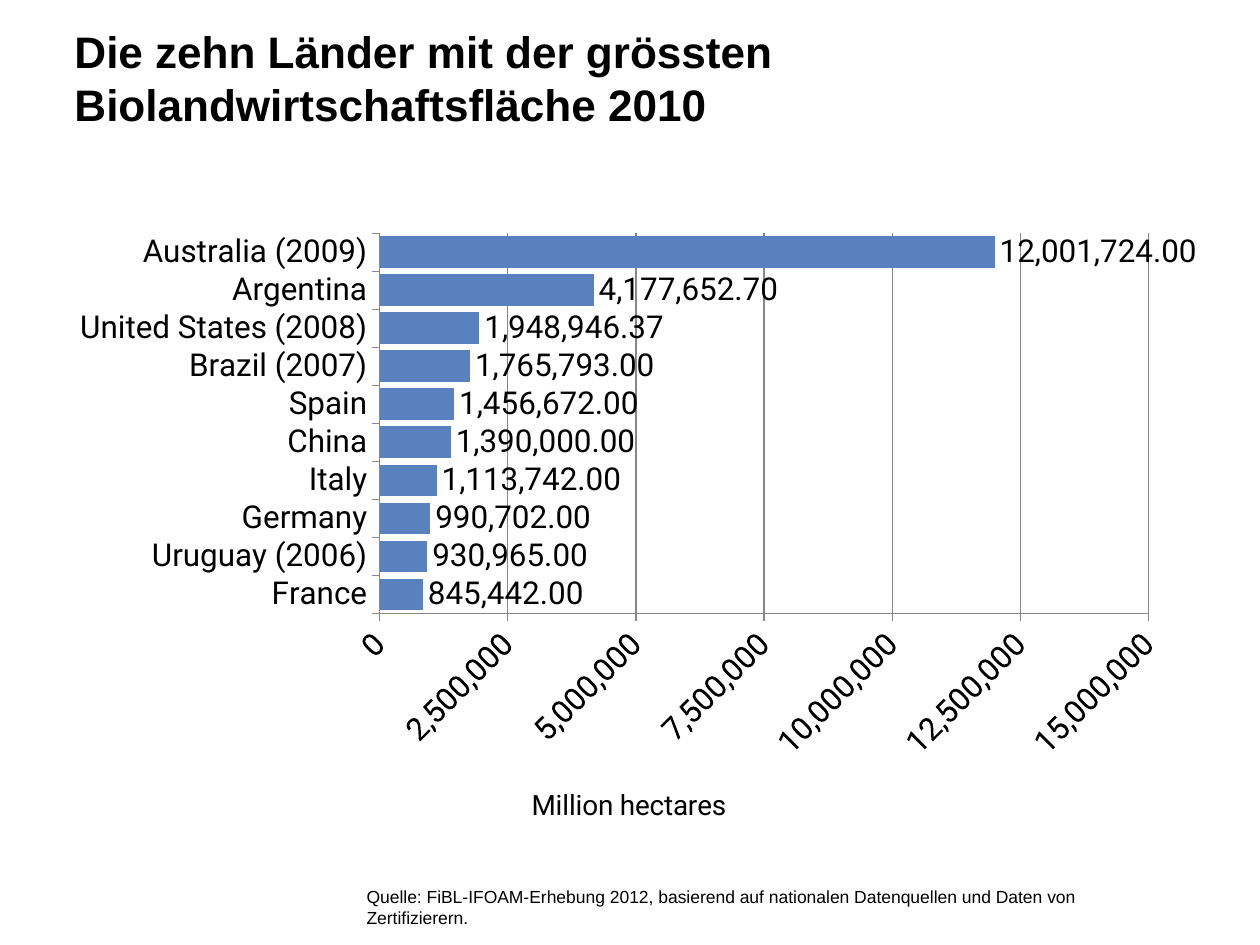
"""Build a slide charting the ten countries with the most organic farmland."""
import lxml.etree
import pptx
import pptx.chart.data
import pptx.dml.color
import pptx.enum.chart
import pptx.enum.text
import pptx.oxml
import pptx.oxml.ns
import pptx.util
from pptx.util import Cm

HECTARES = {
    "France": 845442,
    "Uruguay (2006)": 930965,
    "Germany": 990702,
    "Italy": 1113742,
    "China": 1390000,
    "Spain": 1456672,
    "Brazil (2007)": 1765793,
    "United States (2008)": 1948946.37,
    "Argentina": 4177652.7,
    "Australia (2009)": 12001724,
}


def rgb(code):
    return pptx.dml.color.RGBColor.from_string(code)


def apply(target, values):
    for name, value in values.items():
        setattr(target, name, value)


def place(element, index, **fractions):
    """Give a chart part a manual layout in fractions of the chart."""
    tag = pptx.oxml.ns.qn
    for old in element.findall(tag("c:layout")):
        element.remove(old)
    layout = pptx.oxml.parse_xml(f"<c:layout {pptx.oxml.ns.nsdecls('c')}/>")
    manual = lxml.etree.SubElement(layout, tag("c:manualLayout"))
    settings = {"xMode": "edge", "yMode": "edge", **fractions}
    if "w" in fractions:
        settings = {"layoutTarget": "inner", **settings}
    for name, value in settings.items():
        lxml.etree.SubElement(manual, tag(f"c:{name}")).set("val", str(value))
    element.insert(index, layout)


class SlideBuilder:
    """Hold the style and the current slide."""

    text_font, chart_font = "Arial", "Roboto"
    ink, bar, rule = "000000", "5981BD", "878787"

    def __init__(self, deck):
        self.slide = deck.slides.add_slide(deck.slide_layouts[5])

    def style(self, font, size, name, bold=False):
        apply(font, {"size": pptx.util.Pt(size), "name": name, "bold": bold})
        font.color.rgb = rgb(self.ink)

    def title(self, wording, box):
        heading = self.slide.shapes.title
        apply(heading, box)
        frame = heading.text_frame
        frame.text = wording
        apply(frame, {
            "margin_left": 0, "margin_top": 0,
            "margin_right": Cm(0.25), "margin_bottom": Cm(0.13),
            "vertical_anchor": pptx.enum.text.MSO_ANCHOR.MIDDLE,
            "auto_size": pptx.enum.text.MSO_AUTO_SIZE.NONE, "word_wrap": True,
        })
        frame.paragraphs[0].alignment = pptx.enum.text.PP_ALIGN.LEFT
        self.style(frame.paragraphs[0].runs[0].font, 25.2, self.text_font, True)

    def note(self, wording, box):
        frame = self.slide.shapes.add_textbox(**box).text_frame
        frame.text = wording
        apply(frame, {
            "word_wrap": True,
            "auto_size": pptx.enum.text.MSO_AUTO_SIZE.SHAPE_TO_FIT_TEXT,
        })
        self.style(frame.paragraphs[0].runs[0].font, 10, self.text_font)

    def axis(self, axis, values):
        apply(axis, {"major_tick_mark": pptx.enum.chart.XL_TICK_MARK.OUTSIDE,
                     "minor_tick_mark": pptx.enum.chart.XL_TICK_MARK.NONE,
                     **values})
        self.style(axis.tick_labels.font, 18, self.chart_font)
        lines = [axis.format.line]
        if axis.has_major_gridlines:
            lines.append(axis.major_gridlines.format.line)
        for line in lines:
            line.color.rgb = rgb(self.rule)
            line.width = pptx.util.Pt(0.75)

    def bar_chart(self, figures, unit, box):
        data = pptx.chart.data.CategoryChartData()
        data.categories = list(figures)
        data.add_series("Series 1", list(figures.values()))
        chart = self.slide.shapes.add_chart(
            pptx.enum.chart.XL_CHART_TYPE.BAR_CLUSTERED,
            box["left"], box["top"], box["width"], box["height"], data).chart
        apply(chart, {"has_legend": False, "has_title": False})
        self.style(chart.font, 18, self.text_font)

        self.axis(chart.category_axis, {"has_major_gridlines": False})
        scale = chart.value_axis
        self.axis(scale, {"minimum_scale": 0, "maximum_scale": 15000000,
                          "major_unit": 2500000, "has_major_gridlines": True})
        apply(scale.tick_labels, {"number_format": "#,##0",
                                  "number_format_is_linked": False})
        scale.tick_labels.font._element.getparent().getparent().getparent().find(
            pptx.oxml.ns.qn("a:bodyPr")).set("rot", "-2700000")
        caption = scale.axis_title
        caption.text_frame.text = unit
        self.style(caption.text_frame.paragraphs[0].runs[0].font, 16, self.chart_font)

        plot = chart.plots[0]
        apply(plot, {"gap_width": 20, "vary_by_categories": False})
        fill = plot.series[0].format.fill
        fill.solid()
        fill.fore_color.rgb = rgb(self.bar)
        labels = plot.series[0].data_labels
        apply(labels, {
            "show_value": True, "number_format": "#,##0.00",
            "number_format_is_linked": False,
            "position": pptx.enum.chart.XL_LABEL_POSITION.OUTSIDE_END,
        })
        self.style(labels.font, 18, self.chart_font)
        place(chart._chartSpace.chart.plotArea, 0, x=0.28, y=0.02, w=0.68, h=0.61)
        place(caption._element, 1, x=0.41, y=0.9)


def box(left, top, width, height):
    return {"left": Cm(left), "top": Cm(top), "width": Cm(width), "height": Cm(height)}


def main():
    deck = pptx.Presentation()
    apply(deck, {"slide_width": Cm(25.4), "slide_height": Cm(19.05)})
    builder = SlideBuilder(deck)
    builder.title("Die zehn Länder mit der grössten Biolandwirtschaftsfläche 2010",
                  box(1.5, 0.64, 22.9, 1.98))
    builder.bar_chart(HECTARES, "Million hectares", box(1.27, 4.45, 22.86, 12.57))
    builder.note("Quelle: FiBL-IFOAM-Erhebung 2012, basierend auf nationalen "
                 "Datenquellen und Daten von Zertifizierern.",
                 box(7.14, 17.73, 14.81, 1.12))
    deck.save("out.pptx")


if __name__ == "__main__":
    main()
